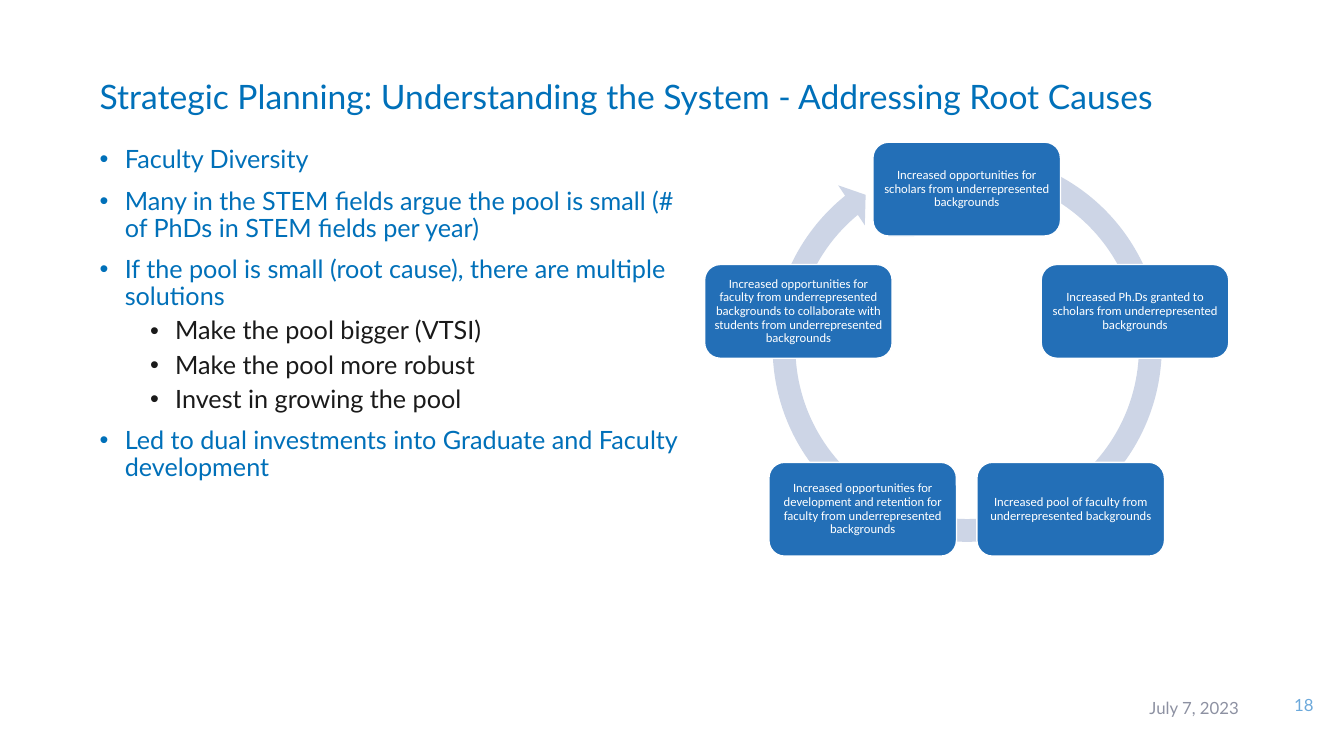
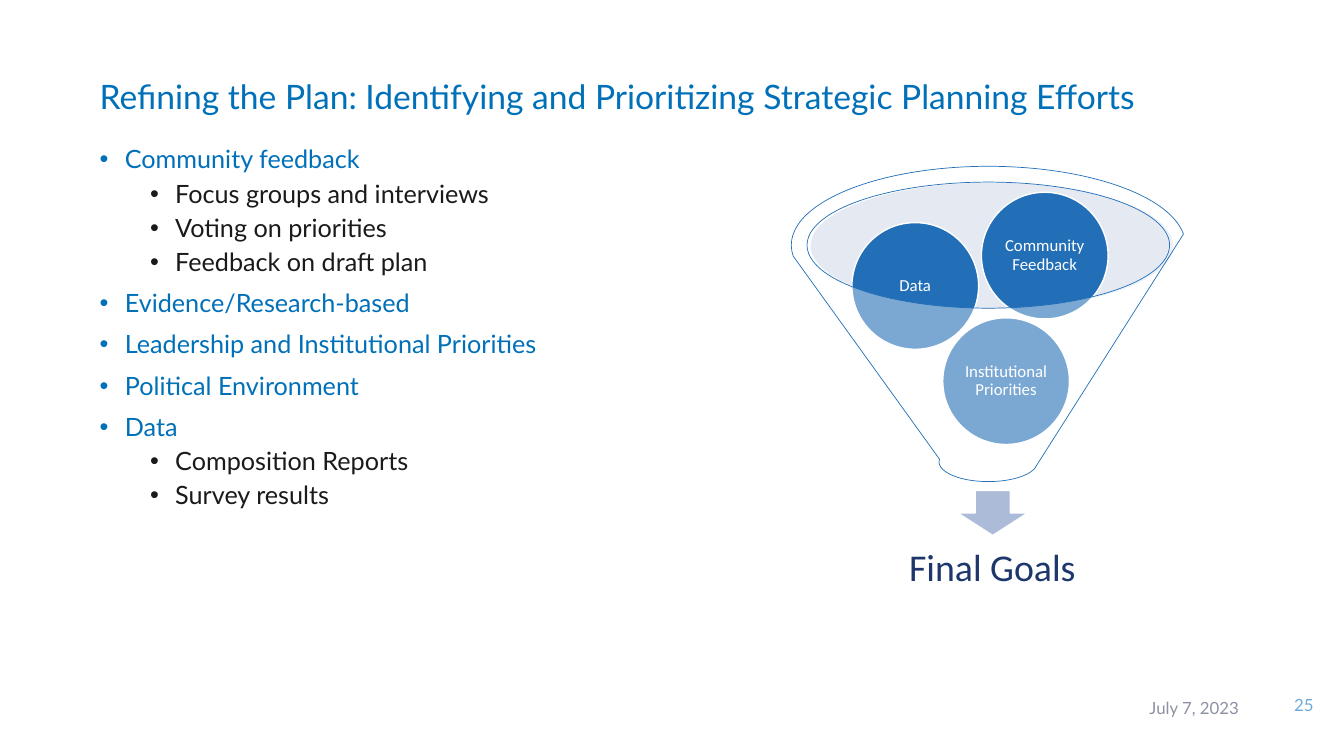
import math

from lxml import etree
from pptx import Presentation
from pptx import util as u
from pptx.dml.color import RGBColor
from pptx.enum import shapes, text
from pptx.oxml import ns

WHITE = RGBColor(0xFF, 0xFF, 0xFF)
HEADING_BLUE = RGBColor(0x00, 0x70, 0xB9)
SHAPE_BLUE = RGBColor(0x23, 0x6F, 0xB7)
NEAR_BLACK = RGBColor(0x1A, 0x1A, 0x1A)
DATE_GREY = RGBColor(0x8D, 0x91, 0xA2)
NUMBER_BLUE = RGBColor(0x6C, 0xA9, 0xDB)
RING_BLUE = RGBColor(0xCD, 0xD5, 0xE6)
RIM_BLUE = RGBColor(0xBD, 0xC8, 0xDF)
ARROW_BLUE = RGBColor(0xAC, 0xBB, 0xD8)
GOAL_NAVY = RGBColor(0x1D, 0x36, 0x6C)

SLIDE_FONT = "Lato"
DIAGRAM_FONT = "Calibri"
LEFT_MARGIN = 64.1
DATE = "July 7, 2023"

SHAPE = shapes.MSO_SHAPE
ALIGN = text.PP_ALIGN
ANCHOR = text.MSO_ANCHOR

# Bullet levels: text indent, space before, colour
LEVELS = [(18, 10, HEADING_BLUE), (54, 5, NEAR_BLACK)]
HANGING = 18

CAUSE_BULLETS = [
    (0, "Faculty Diversity"),
    (0, "Many in the STEM fields argue the pool is small (# of PhDs in STEM fields per year)"),
    (0, "If the pool is small (root cause), there are multiple solutions"),
    (1, "Make the pool bigger (VTSI)"),
    (1, "Make the pool more robust"),
    (1, "Invest in growing the pool"),
    (0, "Led to dual investments into Graduate and Faculty development"),
]
CYCLE_STEPS = [
    "Increased opportunities for scholars from underrepresented backgrounds",
    "Increased Ph.Ds granted to scholars from underrepresented backgrounds",
    "Increased pool of faculty from underrepresented backgrounds",
    "Increased opportunities for development and retention for faculty "
    "from underrepresented backgrounds",
    "Increased opportunities for faculty from underrepresented backgrounds "
    "to collaborate with students from underrepresented backgrounds",
]
EFFORT_BULLETS = [
    (0, "Community feedback"),
    (1, "Focus groups and interviews"),
    (1, "Voting on priorities"),
    (1, "Feedback on draft plan"),
    (0, "Evidence/Research-based"),
    (0, "Leadership and Institutional Priorities"),
    (0, "Political Environment"),
    (0, "Data"),
    (1, "Composition Reports"),
    (1, "Survey results"),
]
FUNNEL_BALLS = [
    ("Institutional Priorities", 673.4, 227.0),
    ("Data", 608.5, 159.0),
    ("Community Feedback", 701.0, 137.3),
]


def set_margins(frame, left, top, right, bottom):
    frame.margin_left, frame.margin_top = u.Pt(left), u.Pt(top)
    frame.margin_right, frame.margin_bottom = u.Pt(right), u.Pt(bottom)


def add_span(para, words, size, color, font):
    span = para.add_run()
    span.text = words
    span.font.size = u.Pt(size)
    span.font.name = font
    span.font.color.rgb = color


def add_box(page, left, top, width, height, anchor=ANCHOR.TOP):
    """Add an empty wrapping text box and return its text frame."""
    box = page.shapes.add_textbox(u.Pt(left), u.Pt(top), u.Pt(width), u.Pt(height))
    frame = box.text_frame
    frame.word_wrap = True
    frame.vertical_anchor = anchor
    return frame


def write_line(frame, words, size, color, font=SLIDE_FONT, align=ALIGN.LEFT, spacing=0.9):
    para = frame.paragraphs[0]
    para.alignment = align
    para.line_spacing = spacing
    add_span(para, words, size, color, font)


def add_bullets(page, items, width):
    frame = add_box(page, LEFT_MARGIN, 101.5, width, 326)
    for index, (level, words) in enumerate(items):
        para = frame.add_paragraph() if index else frame.paragraphs[0]
        indent, space_before, color = LEVELS[level]
        properties = para._p.get_or_add_pPr()
        properties.set("marL", str(u.Pt(indent)))
        properties.set("indent", str(-u.Pt(HANGING)))
        etree.SubElement(properties, ns.qn("a:buFont")).set("typeface", "Arial")
        etree.SubElement(properties, ns.qn("a:buChar")).set("char", "•")
        para.level = level
        para.line_spacing = 0.9
        if index:
            para.space_before = u.Pt(space_before)
        add_span(para, words, 18, color, SLIDE_FONT)


def add_page(deck, title, number):
    """Add a blank slide with the shared title, date and page number."""
    page = deck.slides.add_slide(deck.slide_layouts[6])
    write_line(add_box(page, LEFT_MARGIN, 15.8, 828, 71.3, ANCHOR.BOTTOM),
               title, 24, HEADING_BLUE)
    write_line(add_box(page, 741.6, 491.8, 150.5, 28, ANCHOR.MIDDLE),
               DATE, 12, DATE_GREY, align=ALIGN.RIGHT, spacing=1.0)
    frame = add_box(page, 907.2, 491.8, 38.2, 23, ANCHOR.MIDDLE)
    set_margins(frame, 0, 3.6, 7.2, 3.6)
    write_line(frame, number, 12, NUMBER_BLUE, align=ALIGN.RIGHT, spacing=1.0)
    return page


def add_figure(page, kind, left, top, width, height, fill, line=None, weight=1, opacity=None):
    figure = page.shapes.add_shape(kind, u.Pt(left), u.Pt(top), u.Pt(width), u.Pt(height))
    figure.shadow.inherit = False
    figure.fill.solid()
    figure.fill.fore_color.rgb = fill
    if opacity is not None:
        color = figure.fill._xPr.find(".//" + ns.qn("a:srgbClr"))
        etree.SubElement(color, ns.qn("a:alpha")).set("val", str(opacity * 1000))
    if line is None:
        figure.line.fill.background()
    else:
        figure.line.color.rgb = line
        figure.line.width = u.Pt(weight)
    return figure


def add_label(figure, words, size, margin):
    frame = figure.text_frame
    frame.word_wrap = True
    frame.vertical_anchor = ANCHOR.MIDDLE
    set_margins(frame, margin, margin, margin, margin)
    write_line(frame, words, size, WHITE, DIAGRAM_FONT, ALIGN.CENTER)


def add_cycle(page):
    """Draw the ring arrow with the steps at equal angles, clockwise from the top."""
    ring = add_figure(page, SHAPE.CIRCULAR_ARROW, 542.9, 100.1, 296, 296, RING_BLUE)
    for index, value in enumerate((0.055, 3.307, 138.495, 173.413, 0.058)):
        ring.adjustments[index] = value
    center_x, center_y, radius = 690.5, 261.5, 126.4
    width, height = 134, 67
    for index, words in enumerate(CYCLE_STEPS):
        angle = 2 * math.pi * index / len(CYCLE_STEPS)
        left = center_x + radius * math.sin(angle) - width / 2
        top = center_y - radius * math.cos(angle) - height / 2
        step = add_figure(page, SHAPE.ROUNDED_RECTANGLE, left, top, width, height,
                          SHAPE_BLUE, WHITE)
        add_label(step, words, 9, 2.7)


def add_funnel(page):
    add_figure(page, SHAPE.OVAL, 579, 130.5, 259, 90, RIM_BLUE, opacity=40)
    add_figure(page, SHAPE.DOWN_ARROW, 684, 350.3, 50.2, 32.2, ARROW_BLUE, WHITE)
    frame = add_box(page, 588.2, 376.6, 241.2, 60.5, ANCHOR.MIDDLE)
    set_margins(frame, 15, 15, 15, 15)
    write_line(frame, "Final Goals", 27, GOAL_NAVY, DIAGRAM_FONT, ALIGN.CENTER)
    for words, left, top in FUNNEL_BALLS:
        ball = add_figure(page, SHAPE.OVAL, left, top, 90.5, 90.5, SHAPE_BLUE, WHITE)
        add_label(ball, words, 12, 1.2)
    add_figure(page, SHAPE.FUNNEL, 565.2, 118.8, 281.5, 225.2, WHITE, SHAPE_BLUE, 0.5, opacity=40)


def main():
    deck = Presentation()
    deck.slide_width, deck.slide_height = u.Pt(960), u.Pt(540)

    causes = add_page(
        deck, "Strategic Planning: Understanding the System - Addressing Root Causes", "18")
    add_bullets(causes, CAUSE_BULLETS, 427.7)
    add_cycle(causes)

    efforts = add_page(
        deck, "Refining the Plan: Identifying and Prioritizing Strategic Planning Efforts", "25")
    add_bullets(efforts, EFFORT_BULLETS, 827.3)
    add_funnel(efforts)

    deck.save("out.pptx")


if __name__ == "__main__":
    main()
